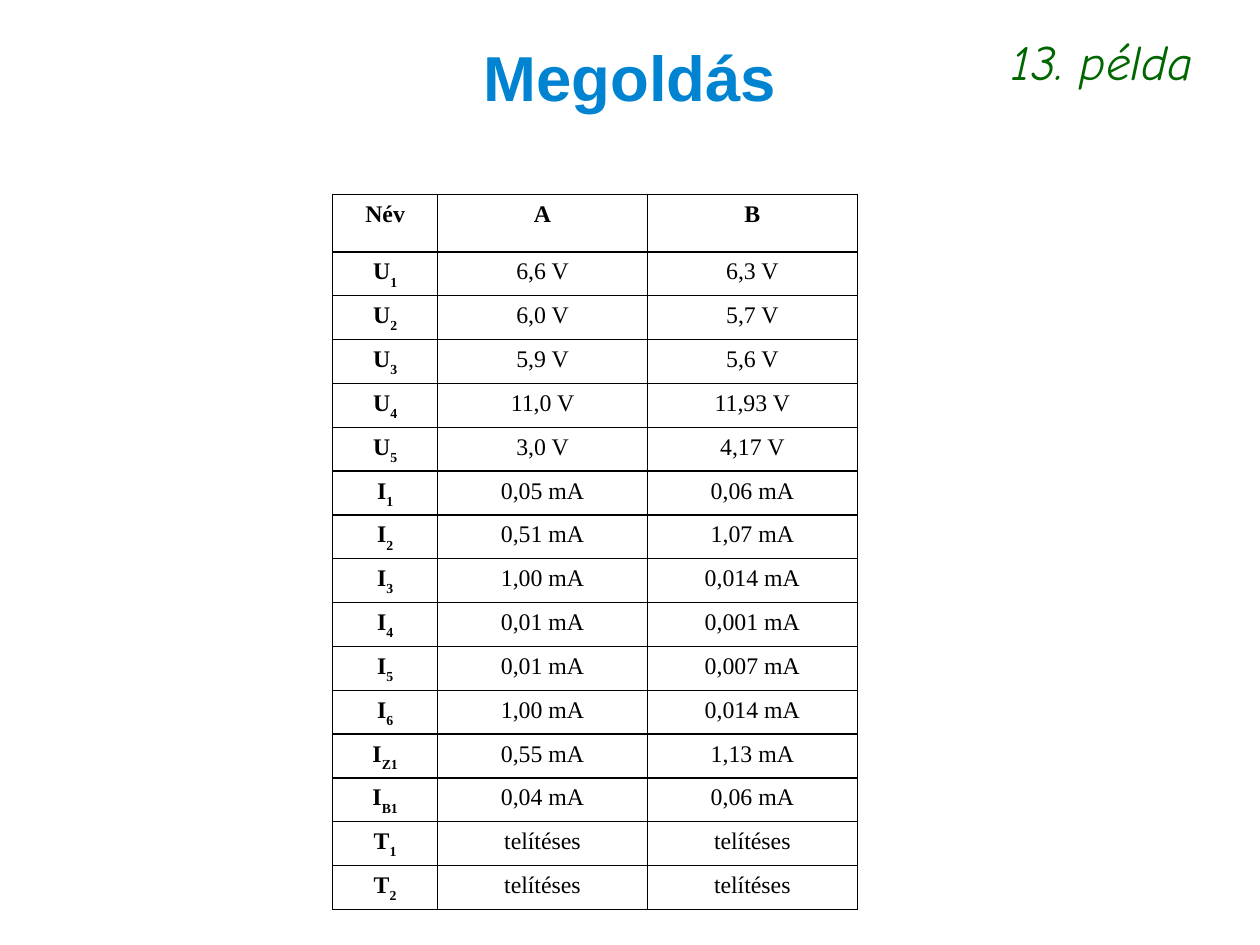
from lxml import etree
from pptx import Presentation
from pptx.dml.color import RGBColor
from pptx.enum import text
from pptx.oxml import ns
from pptx.util import Pt

COLORS = {"title": "0084D1", "example": "006600", "ink": "000000", "paper": "FFFFFF"}

ROWS = [
    ("U", "1", "6,6 V", "6,3 V"),
    ("U", "2", "6,0 V", "5,7 V"),
    ("U", "3", "5,9 V", "5,6 V"),
    ("U", "4", "11,0 V", "11,93 V"),
    ("U", "5", "3,0 V", "4,17 V"),
    ("I", "1", "0,05 mA", "0,06 mA"),
    ("I", "2", "0,51 mA", "1,07 mA"),
    ("I", "3", "1,00 mA", "0,014 mA"),
    ("I", "4", "0,01 mA", "0,001 mA"),
    ("I", "5", "0,01 mA", "0,007 mA"),
    ("I", "6", "1,00 mA", "0,014 mA"),
    ("I", "Z1", "0,55 mA", "1,13 mA"),
    ("I", "B1", "0,04 mA", "0,06 mA"),
    ("T", "1", "telítéses", "telítéses"),
    ("T", "2", "telítéses", "telítéses"),
]


def write(frame, words, subscript="", font="Times New Roman", size=15,
          color="ink", bold=False, italic=False):
    """Fill the first paragraph with centred text and an optional subscript."""
    paragraph = frame.paragraphs[0]
    paragraph.alignment = text.PP_ALIGN.CENTER
    for part in filter(None, (words, subscript)):
        run = paragraph.add_run()
        run.text = part
        run.font.name = font
        run.font.size = Pt(size)
        run.font.bold = bold
        run.font.italic = italic
        run.font.color.rgb = RGBColor.from_string(COLORS[color])
    if subscript:
        run.font._element.set("baseline", "-30000")
    return paragraph


def set_borders(cell, **widths):
    properties = cell._tc.get_or_add_tcPr()
    for side, width in widths.items():
        line = etree.SubElement(properties, ns.qn(f"a:ln{side}"), w=str(Pt(width)))
        fill = etree.SubElement(line, ns.qn("a:solidFill"))
        etree.SubElement(fill, ns.qn("a:srgbClr"), val=COLORS["ink"])


presentation = Presentation()
presentation.slide_width = Pt(793.75)
presentation.slide_height = Pt(595.25)
slide = presentation.slides.add_slide(presentation.slide_layouts[6])

# Title
title = slide.shapes.add_textbox(Pt(39.6), Pt(0.7), Pt(714.2), Pt(99.4)).text_frame
title.word_wrap = True
title.vertical_anchor = text.MSO_ANCHOR.MIDDLE
title.margin_left = title.margin_right = title.margin_top = title.margin_bottom = 0
heading = write(title, "Megoldás", font="Arial", size=40, color="title", bold=True)
heading.line_spacing = 0.93

# Table of results
table = slide.shapes.add_table(len(ROWS) + 1, 3, Pt(209.5), Pt(122.4), Pt(330.6), Pt(433)).table
table.first_row = table.horz_banding = False
for column, width in zip(table.columns, (66.2, 132.2, 132.2)):
    column.width = Pt(width)
for index, row in enumerate(table.rows):
    row.height = Pt(26.6 if index else 36.3)

cells = [[("Név", "", True), ("A", "", True), ("B", "", True)]]
for symbol, subscript, value_a, value_b in ROWS:
    cells.append([(symbol, subscript, True), (value_a, "", False), (value_b, "", False)])

for row_index, row in enumerate(cells):
    for column_index, (words, subscript, bold) in enumerate(row):
        cell = table.cell(row_index, column_index)
        cell.margin_left = cell.margin_right = Pt(7.9)
        cell.margin_top = Pt(4.3)
        cell.margin_bottom = Pt(2.1)
        set_borders(cell, L=0.75, R=0.75, T=2 if row_index == 1 else 1,
                    B=2 if row_index == 0 else 1)
        cell.fill.solid()
        cell.fill.fore_color.rgb = RGBColor.from_string(COLORS["paper"])
        write(cell.text_frame, words, subscript, bold=bold)

# Example number
example = slide.shapes.add_textbox(Pt(608.4), Pt(15.1), Pt(172.1), Pt(46.8)).text_frame
example.word_wrap = True
example.vertical_anchor = text.MSO_ANCHOR.MIDDLE
example.margin_left = example.margin_right = Pt(7.9)
write(example, "13. példa", font="Comic Neue", size=31, color="example", italic=True)

presentation.save("out.pptx")
